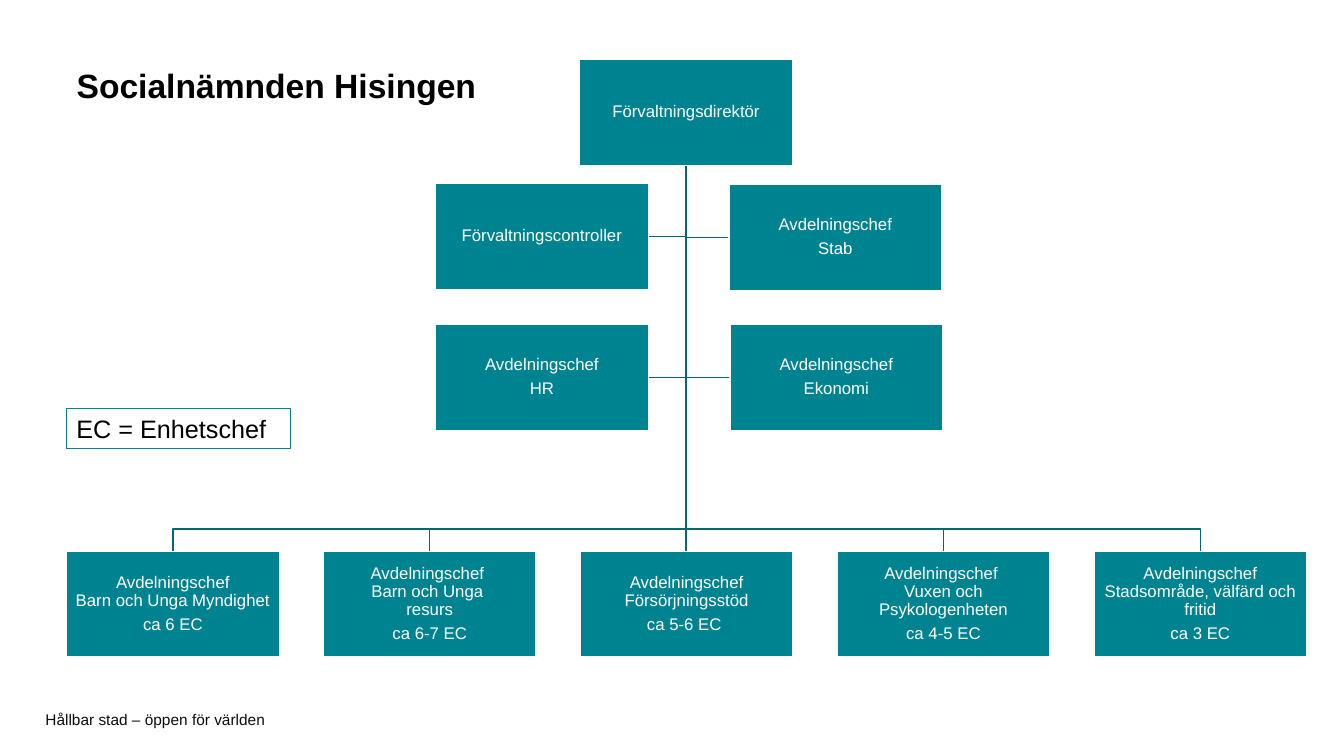
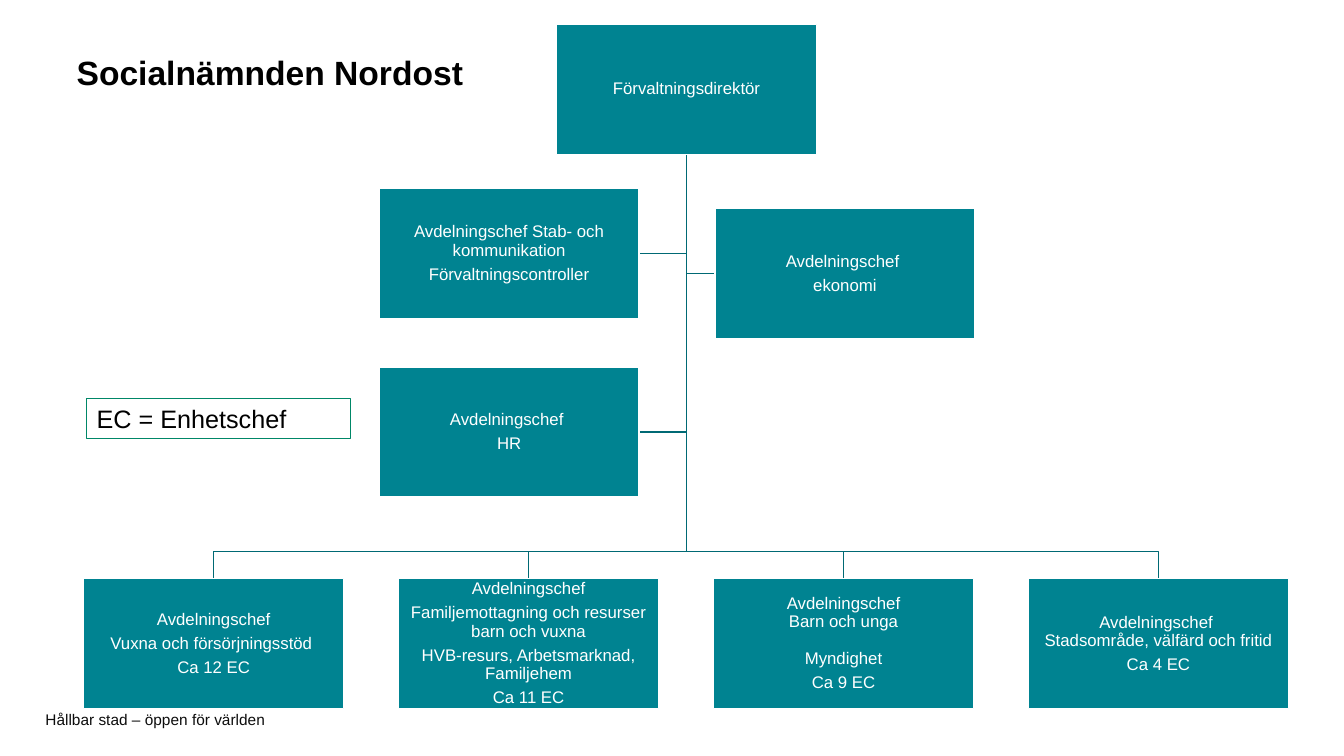
from copy import deepcopy

from lxml import etree
from pptx import Presentation
from pptx.dml.color import RGBColor
from pptx.enum.shapes import MSO_SHAPE, PP_PLACEHOLDER
from pptx.enum.text import MSO_ANCHOR, MSO_AUTO_SIZE, PP_ALIGN
from pptx.oxml.ns import qn
from pptx.util import Inches, Pt

RECT = MSO_SHAPE.RECTANGLE
FOOTER = PP_PLACEHOLDER.FOOTER
TOP, MIDDLE = MSO_ANCHOR.TOP, MSO_ANCHOR.MIDDLE
LEFT, CENTER = PP_ALIGN.LEFT, PP_ALIGN.CENTER
NO_FIT = MSO_AUTO_SIZE.NONE

FONT = "Arial"
TEAL, DARK_TEAL, GREEN = "008391", "006974", "008767"
WHITE, BLACK, INK = "FFFFFF", "000000", "0D0D0D"
BAR_RATIO = 0.21
BLOCK_GAP = 4.2


def color(value):
    return RGBColor.from_string(value)


def place(shape, left, top, width, height):
    shape.left, shape.top = Inches(left), Inches(top)
    shape.width, shape.height = Inches(width), Inches(height)


def frame(tf, anchor, inset_x=0.1, inset_y=0.05):
    tf.word_wrap = True
    tf.auto_size = NO_FIT
    tf.vertical_anchor = anchor
    tf.margin_left = tf.margin_right = Inches(inset_x)
    tf.margin_top = tf.margin_bottom = Inches(inset_y)


def write(p, text, size, ink, bold=False, align=LEFT, spacing=1.0, after=0):
    p.text = text
    p.alignment = align
    p.line_spacing = spacing
    p.space_before, p.space_after = Pt(0), Pt(after)
    for br in p._p.findall(qn("a:br")):
        etree.SubElement(br, qn("a:rPr"), sz=str(size * 100))
    for r in p.runs:
        r.font.name, r.font.size, r.font.bold = FONT, Pt(size), bold
        r.font.color.rgb = color(ink)


def style(sp, line, line_width, fill=None):
    sp.shadow.inherit = False
    if fill:
        sp.fill.solid()
        sp.fill.fore_color.rgb = color(fill)
    else:
        sp.fill.background()
    sp.line.color.rgb = color(line)
    sp.line.width = Pt(line_width)


def add_rect(s, left, top, width, height, line, line_width, fill=None):
    sp = s.shapes.add_shape(RECT, Inches(left), Inches(top), Inches(width), Inches(height))
    style(sp, line, line_width, fill)
    return sp


def add_branch(s, *points):
    start, *rest = [(Inches(x), Inches(y)) for x, y in points]
    builder = s.shapes.build_freeform(*start)
    builder.add_line_segments(rest, close=False)
    style(builder.convert_to_shape(), DARK_TEAL, 1)


def add_role(s, left, top, width, height, blocks):
    sp = add_rect(s, left, top, width, height, WHITE, 1, TEAL)
    tf = sp.text_frame
    frame(tf, MIDDLE, 0.01, 0.01)
    for i, block in enumerate(blocks):
        text, after = block if isinstance(block, tuple) else (block, BLOCK_GAP)
        p = tf.add_paragraph() if i else tf.paragraphs[0]
        write(p, text, 12, WHITE, align=CENTER, spacing=0.9, after=after)


def add_legend(s, left, top, width, line):
    sp = add_rect(s, left, top, width, 0.4, line, 0.75)
    frame(sp.text_frame, MIDDLE)
    write(sp.text_frame.paragraphs[0], "EC = Enhetschef", 18, BLACK)


def add_org_chart(s, size, director, staff, first_left, last_left, managers_top, managers):
    width, height = size
    director_left, director_top = director
    trunk_x = director_left + width / 2
    start = (trunk_x, director_top + height)
    bar_y = managers_top - BAR_RATIO * height
    pitch = (last_left - first_left) / (len(managers) - 1)
    lefts = [first_left + i * pitch for i in range(len(managers))]

    for left, top, _ in staff:
        edge = left + width if left < trunk_x else left
        y = top + height / 2
        add_branch(s, start, (trunk_x, y), (edge, y))
    for left in lefts:
        x = left + width / 2
        if abs(x - trunk_x) < 0.02:
            add_branch(s, start, (trunk_x, managers_top))
        else:
            add_branch(s, start, (trunk_x, bar_y), (x, bar_y), (x, managers_top))

    roles = [(director_left, director_top, ["Förvaltningsdirektör"])]
    roles += [(left, managers_top, blocks) for left, blocks in zip(lefts, managers)]
    for left, top, blocks in roles + staff:
        add_role(s, left, top, width, height, blocks)


def format_footer(layout):
    footer = next(ph for ph in layout.placeholders if ph.placeholder_format.type == FOOTER)
    place(footer, 0.45, 7.06, 9.45, 0.16)
    frame(footer.text_frame, MIDDLE, 0, 0)
    write(footer.text_frame.paragraphs[0], "Hållbar stad – öppen för världen", 11, INK)
    return footer


def add_slide(prs, layout, footer, title, title_top):
    s = prs.slides.add_slide(layout)
    s.shapes.element.append(deepcopy(footer.element))
    place(s.shapes.title, 0.66, title_top, 4.37, 0.5)
    tf = s.shapes.title.text_frame
    frame(tf, TOP)
    write(tf.paragraphs[0], title, 24, BLACK, bold=True)
    return s


def main():
    prs = Presentation()
    prs.slide_width, prs.slide_height = Inches(13.33), Inches(7.5)
    layout = prs.slide_layouts[5]
    footer = format_footer(layout)

    s = add_slide(prs, layout, footer, "Socialnämnden Hisingen", 0.59)
    add_org_chart(
        s, (2.11, 1.05), (5.75, 0.59),
        staff=[
            (4.32, 1.82, ["Förvaltningscontroller"]),
            (7.23, 1.83, ["Avdelningschef", "Stab"]),
            (4.32, 3.22, ["Avdelningschef", "HR"]),
            (7.24, 3.22, ["Avdelningschef", "Ekonomi"]),
        ],
        first_left=0.66, last_left=10.85, managers_top=5.47,
        managers=[
            ["Avdelningschef\vBarn och Unga Myndighet", "ca 6 EC"],
            ["Avdelningschef \vBarn och Unga \vresurs", "ca 6-7 EC"],
            ["Avdelningschef Försörjningsstöd", "ca 5-6 EC "],
            ["Avdelningschef \vVuxen och Psykologenheten", "ca 4-5 EC"],
            ["Avdelningschef Stadsområde, välfärd och fritid", "ca 3 EC"],
        ],
    )
    add_legend(s, 0.66, 4.05, 2.22, TEAL)

    s = add_slide(prs, layout, footer, "Socialnämnden Nordost", 0.46)
    add_org_chart(
        s, (2.58, 1.29), (5.52, 0.24),
        staff=[
            (3.76, 1.87, ["Avdelningschef Stab- och kommunikation", "Förvaltningscontroller"]),
            (7.09, 2.07, ["Avdelningschef ", "ekonomi"]),
            (3.76, 3.64, ["Avdelningschef ", "HR"]),
        ],
        first_left=0.83, last_left=10.2, managers_top=5.74,
        managers=[
            ["Avdelningschef", "Vuxna och försörjningsstöd ", "Ca 12 EC"],
            ["Avdelningschef", "Familjemottagning och resurser barn och vuxna",
             "HVB-resurs, Arbetsmarknad, Familjehem", "Ca 11 EC"],
            [("Avdelningschef\vBarn och unga", 13), "Myndighet", "Ca 9 EC"],
            ["Avdelningschef \vStadsområde, välfärd och fritid", "Ca 4 EC"],
        ],
    )
    add_legend(s, 0.86, 3.95, 2.62, GREEN)

    prs.save("out.pptx")


if __name__ == "__main__":
    main()
